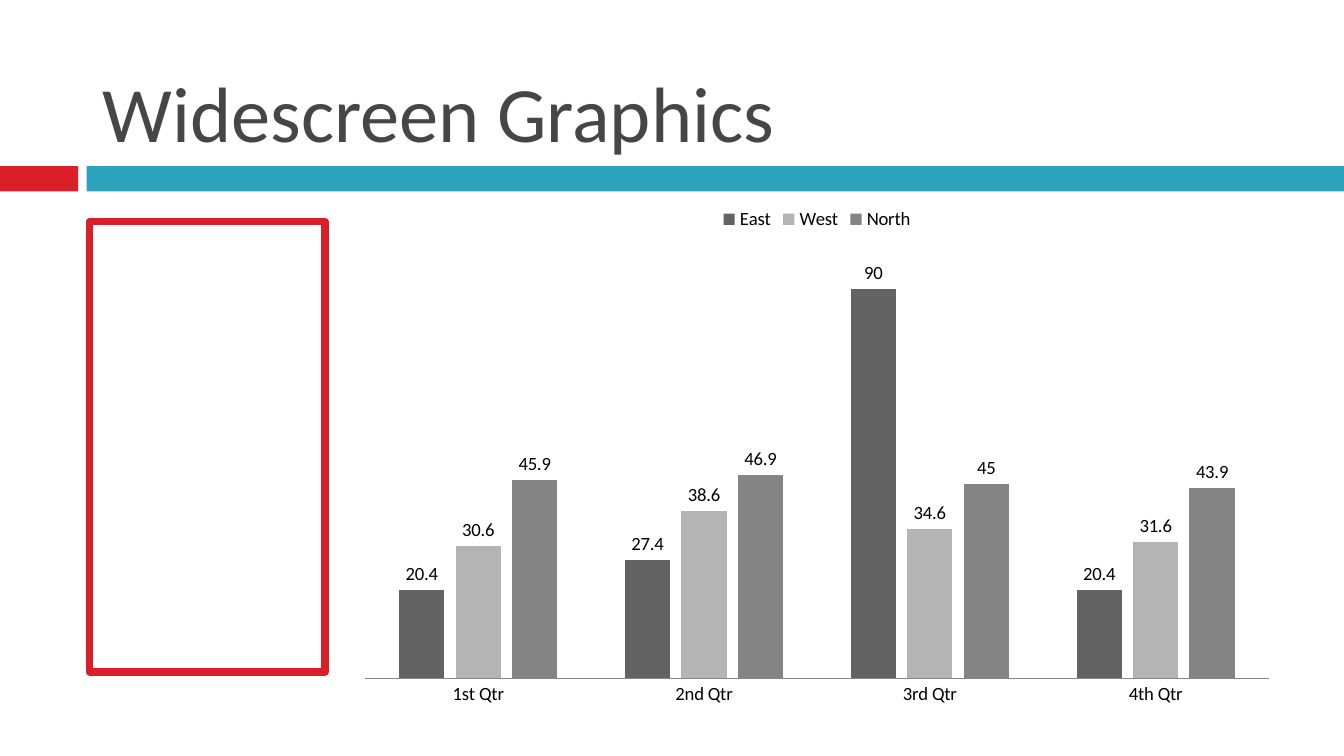
from pptx import Presentation
from pptx.chart.data import CategoryChartData
from pptx.dml.color import RGBColor
from pptx.enum.chart import XL_CHART_TYPE, XL_LABEL_POSITION, XL_LEGEND_POSITION, XL_TICK_MARK
from pptx.enum.shapes import MSO_SHAPE
from pptx.enum.text import MSO_ANCHOR
from pptx.util import Cm, Pt

COLUMNS = XL_CHART_TYPE.COLUMN_CLUSTERED
OUTSIDE_END = XL_LABEL_POSITION.OUTSIDE_END
TOP = XL_LEGEND_POSITION.TOP
NO_TICKS = XL_TICK_MARK.NONE
RECTANGLE = MSO_SHAPE.RECTANGLE
BOTTOM = MSO_ANCHOR.BOTTOM

# Content
TITLE = "Widescreen Graphics"
QUARTERS = ["1st Qtr", "2nd Qtr", "3rd Qtr", "4th Qtr"]
SERIES = [
    ("East", "dark", [20.4, 27.4, 90, 20.4]),
    ("West", "light", [30.6, 38.6, 34.6, 31.6]),
    ("North", "middle", [45.9, 46.9, 45, 43.9]),
]

# Formats
FONT = "Calibri"
COLORS = {
    "red": "DA1F28", "teal": "2DA2BF", "title": "464646", "text": "000000",
    "dark": "636363", "light": "B4B4B4", "middle": "848484", "axis": "868686",
}
TITLE_FORMAT = {"name": FONT, "size": Pt(42), "bold": False}
CHART_FORMAT = {"name": FONT, "size": Pt(10), "bold": False}

# Layout in centimetres
SLIDE_WIDTH, SLIDE_HEIGHT = 25.4, 14.29
BAND_TOP, BAND_HEIGHT = 3.14, 0.48
BAND_SPLIT, BAND_GAP = 1.48, 0.16
TITLE_BOX = (1.69, 0.2, 22.44, 2.92)
FRAME_BOX = (1.69, 4.19, 4.45, 8.51)
CHART_BOX = (6.55, 3.66, 17.78, 9.86)


def color(name):
    return RGBColor.from_string(COLORS[name])


def lengths(box):
    return [Cm(value) for value in box]


def apply_font(font, values, color_name):
    for name, value in values.items():
        setattr(font, name, value)
    font.color.rgb = color(color_name)


def paint(fill, color_name):
    fill.solid()
    fill.fore_color.rgb = color(color_name)


def add_rectangle(slide, box):
    shape = slide.shapes.add_shape(RECTANGLE, *lengths(box))
    shape.shadow.inherit = False
    return shape


def add_bands(slide):
    right_start = BAND_SPLIT + BAND_GAP
    bands = [("red", 0, BAND_SPLIT), ("teal", right_start, SLIDE_WIDTH - right_start)]
    for color_name, left, width in bands:
        band = add_rectangle(slide, (left, BAND_TOP, width, BAND_HEIGHT))
        paint(band.fill, color_name)
        band.line.fill.background()


def add_title(slide):
    frame = slide.shapes.add_textbox(*lengths(TITLE_BOX)).text_frame
    frame.word_wrap = True
    frame.vertical_anchor = BOTTOM
    paragraph = frame.paragraphs[0]
    run = paragraph.add_run()
    run.text = TITLE
    apply_font(run.font, TITLE_FORMAT, "title")


def add_frame(slide):
    frame = add_rectangle(slide, FRAME_BOX)
    frame.fill.background()
    frame.line.color.rgb = color("red")
    frame.line.width = Pt(4)


def add_quarter_chart(slide):
    data = CategoryChartData(number_format="General")
    data.categories = QUARTERS
    for name, _, values in SERIES:
        data.add_series(name, values)
    chart = slide.shapes.add_chart(COLUMNS, *lengths(CHART_BOX), data).chart
    apply_font(chart.font, CHART_FORMAT, "text")
    chart.has_title = False

    # Legend
    chart.has_legend = True
    chart.legend.position = TOP
    chart.legend.include_in_layout = False

    # Axes
    category_axis = chart.category_axis
    category_axis.major_tick_mark = NO_TICKS
    category_axis.format.line.color.rgb = color("axis")
    value_axis = chart.value_axis
    value_axis.minimum_scale, value_axis.maximum_scale = 0, 100
    value_axis.has_major_gridlines = False
    value_axis.visible = False

    # Columns and their values
    plot = chart.plots[0]
    plot.gap_width, plot.overlap = 150, -25
    plot.vary_by_categories = False
    for series, (_, color_name, _) in zip(plot.series, SERIES):
        paint(series.format.fill, color_name)
        labels = series.data_labels
        labels.show_value = True
        labels.position = OUTSIDE_END


def main():
    presentation = Presentation()
    presentation.slide_width = Cm(SLIDE_WIDTH)
    presentation.slide_height = Cm(SLIDE_HEIGHT)
    slide = presentation.slides.add_slide(presentation.slide_layouts[6])
    add_bands(slide)
    add_title(slide)
    add_frame(slide)
    add_quarter_chart(slide)
    presentation.save("out.pptx")


if __name__ == "__main__":
    main()
